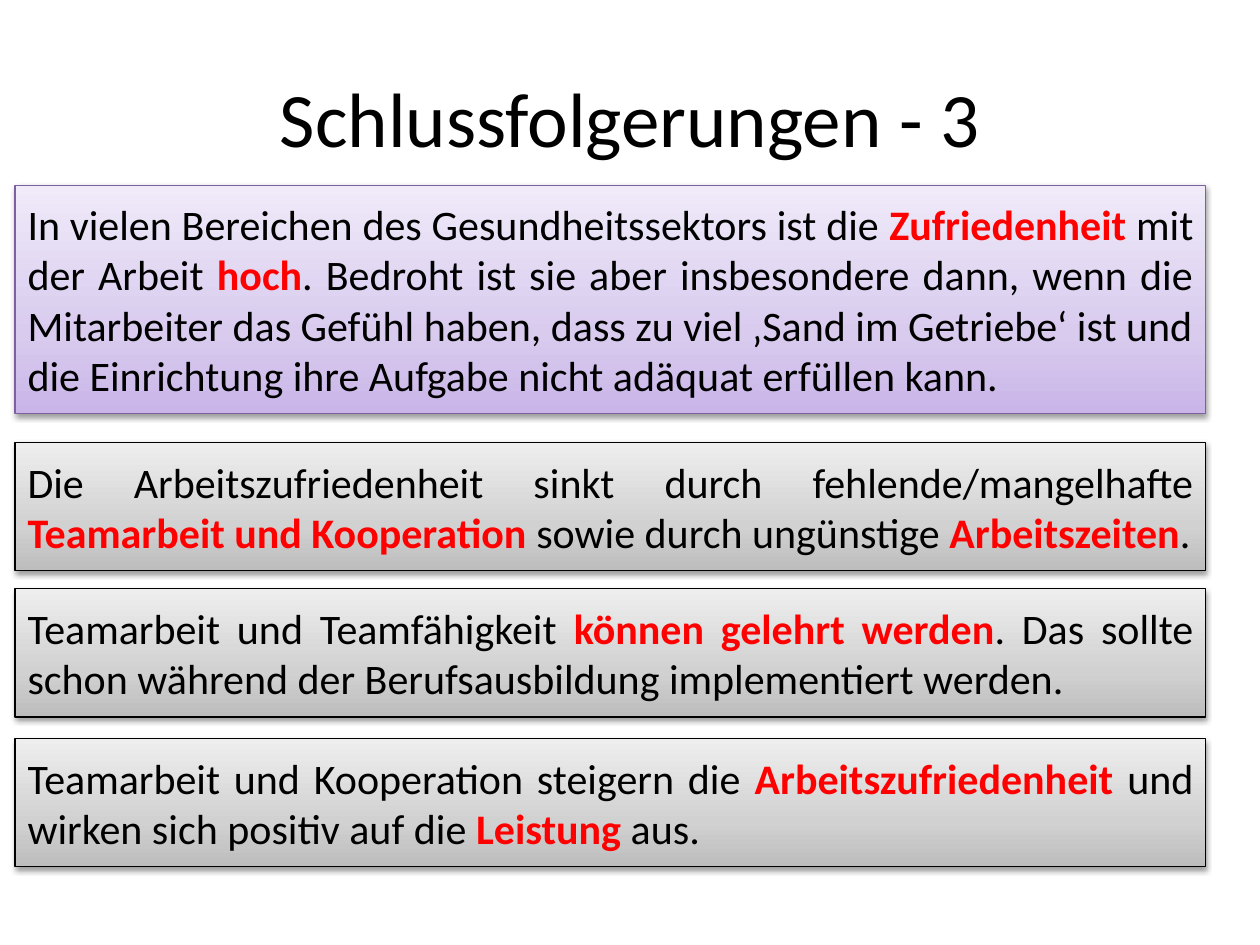
"""Build the slide of conclusions: a title above four shaded text boxes."""
from pptx import Presentation, dml, oxml, util as u
from pptx.dml import color
from pptx.enum import shapes, text
from pptx.oxml import ns

THEME = {
    "font": "Calibri",
    "head": 44,
    "body": 24,
    "ink": "000000",
    "mark": "FF0000",
    "lilac": {"fill": ("C9B5E8", "D8CBEE", "F0EAF9"), "line": "7D60A0"},
    "grey": {"fill": ("BDBDBD", "D1D1D1", "EEEEEE"), "line": "000000"},
}
STOPS = (0, 35, 100)
FRAME = {"word_wrap": True, "vertical_anchor": text.MSO_ANCHOR.MIDDLE}

BOXES = [
    (1.47, 1.81, "lilac", [
        "In vielen Bereichen des Gesundheitssektors ist die ", "Zufriedenheit",
        " mit der Arbeit ", "hoch",
        ". Bedroht ist sie aber insbesondere dann, wenn die Mitarbeiter das "
        "Gefühl haben, dass zu viel ‚Sand im Getriebe‘ ist und die "
        "Einrichtung ihre Aufgabe nicht adäquat erfüllen kann."]),
    (3.51, 1.02, "grey", [
        "Die Arbeitszufriedenheit sinkt durch fehlende/mangelhafte ",
        "Teamarbeit und Kooperation", " sowie durch ungünstige ",
        "Arbeitszeiten", "."]),
    (4.67, 1.02, "grey", [
        "Teamarbeit und Teamfähigkeit ", "können gelehrt werden",
        ". Das sollte schon während der Berufsausbildung implementiert "
        "werden."]),
    (5.86, 1.02, "grey", [
        "Teamarbeit und Kooperation steigern die ", "Arbeitszufriedenheit",
        " und wirken sich positiv auf die ", "Leistung", " aus."]),
]


def write(shape, parts, size, align):
    frame = shape.text_frame
    for key, val in FRAME.items():
        setattr(frame, key, val)
    para = frame.paragraphs[0]
    para.alignment = align
    for i, part in enumerate(parts):
        run = para.add_run()
        run.text = part
        bold = i % 2 == 1
        form = {"name": THEME["font"], "size": u.Pt(size), "bold": bold}
        for key, val in form.items():
            setattr(run.font, key, val)
        tint = THEME["mark" if bold else "ink"]
        run.font.color.rgb = color.RGBColor.from_string(tint)


def shade(shape, tints):
    stops = "".join(
        f'<a:gs pos="{pos * 1000}"><a:srgbClr val="{tint}"/></a:gs>'
        for pos, tint in zip(STOPS, tints))
    props = shape._element.spPr
    props.insert(2, oxml.parse_xml(
        f'<a:gradFill {ns.nsdecls("a")} rotWithShape="1"><a:gsLst>{stops}'
        '</a:gsLst><a:lin ang="16200000" scaled="0"/></a:gradFill>'))
    shape.shadow.inherit = False
    props.find(ns.qn("a:effectLst")).append(oxml.parse_xml(
        f'<a:outerShdw {ns.nsdecls("a")} blurRad="{u.Pt(3.1)}" '
        f'dist="{u.Pt(1.6)}" dir="5400000" rotWithShape="0">'
        '<a:srgbClr val="000000"><a:alpha val="38000"/></a:srgbClr>'
        '</a:outerShdw>'))


deck = Presentation()
deck.slide_width, deck.slide_height = u.Inches(10), u.Inches(7.5)
slide = deck.slides.add_slide(deck.slide_layouts[6])

title = slide.shapes.add_textbox(
    u.Inches(0.5), u.Inches(0.3), u.Inches(9), u.Inches(1.25))
write(title, ["Schlussfolgerungen - 3"], THEME["head"], text.PP_ALIGN.CENTER)

for top, high, kind, parts in BOXES:
    box = slide.shapes.add_shape(
        shapes.MSO_SHAPE.RECTANGLE, u.Inches(0.12), u.Inches(top),
        u.Inches(9.45), u.Inches(high))
    look = THEME[kind]
    shade(box, look["fill"])
    box.line.color.rgb = color.RGBColor.from_string(look["line"])
    box.line.width = u.Pt(0.75)
    write(box, parts, THEME["body"], text.PP_ALIGN.JUSTIFY)

deck.save("out.pptx")
